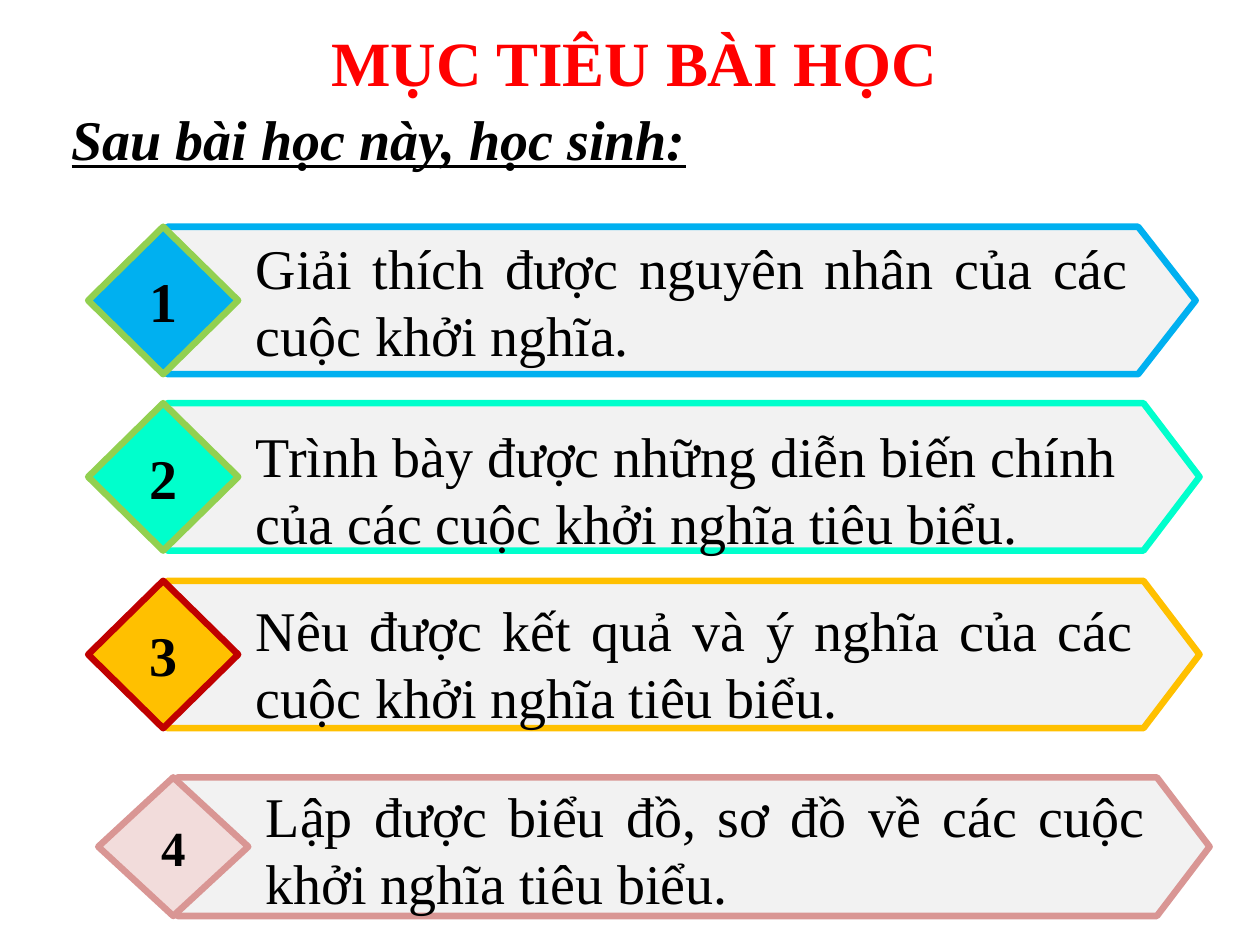
from pptx import Presentation
from pptx.dml.color import RGBColor
from pptx.enum import shapes, text
from pptx.util import Inches, Pt

HUES = {
    "black": "000000", "red": "FF0000", "gray": "F2F2F2", "blue": "00B0F0",
    "green": "92D050", "mint": "00FFCC", "gold": "FFC000", "brick": "C00000",
    "rose": "D99694", "blush": "F2DCDB",
}
KIND = shapes.MSO_SHAPE
SIDE = text.PP_ALIGN


def hue(name):
    return RGBColor.from_string(HUES[name])


def write(shape, words, ink, align, look, pads):
    frame = shape.text_frame
    frame.word_wrap = True
    for side, pad in zip(("left", "top", "right", "bottom"), pads):
        setattr(frame, "margin_" + side, Inches(pad))
    para = frame.paragraphs[0]
    para.alignment = align
    run = para.add_run()
    run.text = words
    run.font.color.rgb = hue(ink)
    for key, value in {"name": "Times New Roman", **look}.items():
        setattr(run.font, key, value)
    return frame


deck = Presentation()
deck.slide_width, deck.slide_height = Inches(10), Inches(7.5)
slide = deck.slides.add_slide(deck.slide_layouts[6])
pads = (0.1, 0.05, 0.1, 0.05)

heads = [
    ("Sau bài học này, học sinh:", (0.47, 0.78, 5.75, 0.64), "black", SIDE.LEFT, 1,
     {"size": Pt(32), "bold": True, "italic": True, "underline": True}),
    ("MỤC TIÊU BÀI HỌC", (2.34, -0.16, 5.39, 1.01), "red", SIDE.CENTER, 1.5,
     {"size": Pt(36), "bold": True}),
]
for words, place, ink, align, space, look in heads:
    box = slide.shapes.add_textbox(*map(Inches, place))
    frame = write(box, words, ink, align, look, pads)
    frame.paragraphs[0].line_spacing = space

goals = [
    ("Giải thích được nguyên nhân của các cuộc khởi nghĩa.",
     0.7, 1.8, 8.16, 1.17, 0.39, "blue", "blue", "green", SIDE.JUSTIFY, 0, 32),
    ("Trình bày được những diễn biến chính của các cuộc khởi nghĩa tiêu biểu.",
     0.7, 3.2, 8.19, 1.17, 0.38, "mint", "mint", "green", SIDE.LEFT, 0.18, 32),
    ("Nêu được kết quả và ý nghĩa của các cuộc khởi nghĩa tiêu biểu.",
     0.7, 4.61, 8.19, 1.17, 0.38, "gold", "gold", "brick", SIDE.JUSTIFY, 0.13, 32),
    ("Lập được biểu đồ, sơ đồ về các cuộc khởi nghĩa tiêu biểu.",
     0.78, 6.17, 8.19, 1.1, 0.38, "rose", "blush", "rose", SIDE.JUSTIFY, 0.03, 28),
]
for num, goal in enumerate(goals, 1):
    words, left, top, wide, high, tip, edge, fill, rim, align, drop, size = goal
    parts = [
        (KIND.PENTAGON, left + 0.63, wide, "gray", edge, words, align,
         {"size": Pt(32), "bold": False}, (0.7, drop, 0.3, 0)),
        (KIND.DIAMOND, left, 1.19, fill, rim, str(num), SIDE.CENTER,
         {"size": Pt(size), "bold": True}, pads),
    ]
    for kind, x, width, paint, line, label, lean, look, gaps in parts:
        shape = slide.shapes.add_shape(
            kind, Inches(x), Inches(top), Inches(width), Inches(high))
        if kind == KIND.PENTAGON:
            shape.adjustments[0] = tip
        shape.shadow.inherit = False
        shape.fill.solid()
        shape.fill.fore_color.rgb = hue(paint)
        shape.line.color.rgb = hue(line)
        shape.line.width = Pt(3.75)
        frame = write(shape, label, "black", lean, look, gaps)
        frame.vertical_anchor = text.MSO_ANCHOR.MIDDLE

deck.save("out.pptx")
